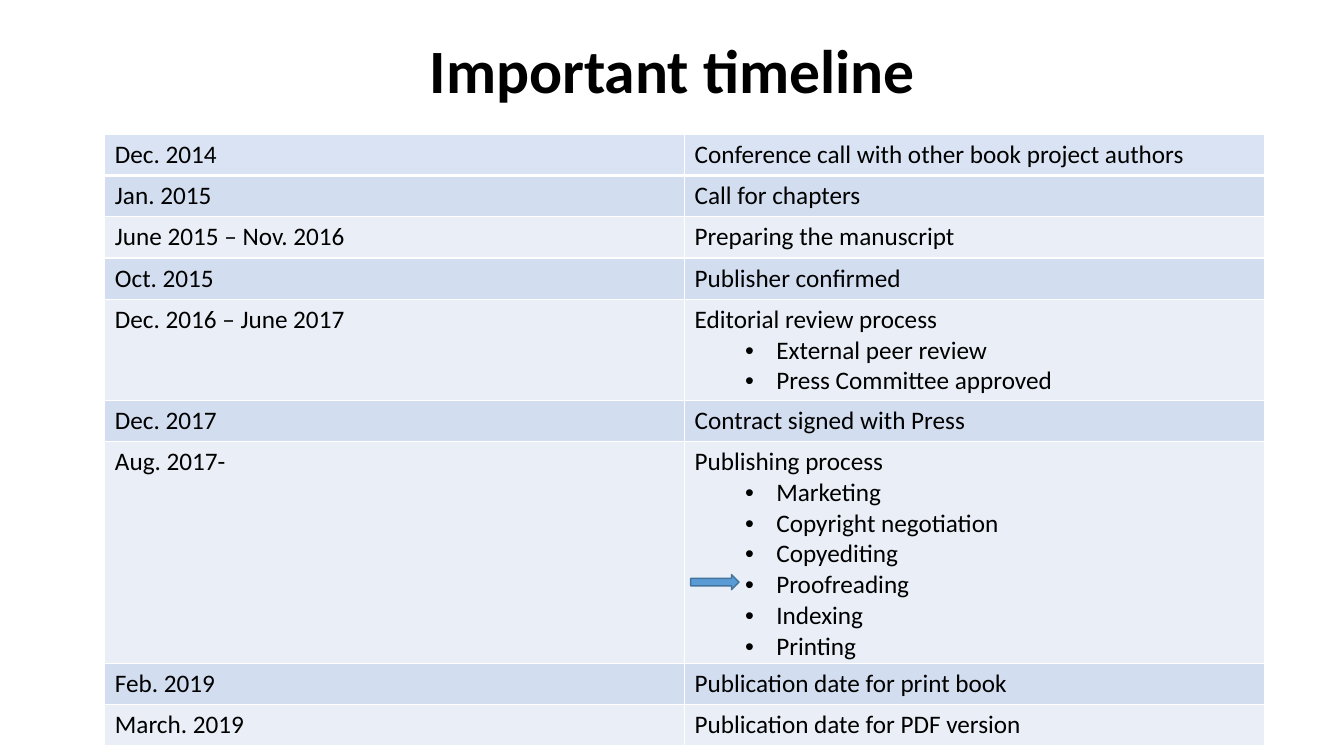
from lxml import etree
from pptx import Presentation
from pptx.dml.color import RGBColor
from pptx.enum.shapes import MSO_SHAPE
from pptx.enum.text import MSO_ANCHOR, PP_ALIGN
from pptx.oxml.ns import qn
from pptx.util import Emu, Pt

PX = 9144  # 100 px to the inch
CENTER = PP_ALIGN.CENTER
MIDDLE = MSO_ANCHOR.MIDDLE
RIGHT_ARROW = MSO_SHAPE.RIGHT_ARROW

FONT = "Calibri"
BLACK, WHITE = "000000", "FFFFFF"
HEADER_FILL = "DAE3F3"
BAND_FILLS = ["EAEFF7", "D2DEEF"]
ARROW_FILL, ARROW_LINE = "5B9BD5", "43739E"

ROW_HEIGHT = 41
BULLET_LEFT, BULLET_HANG = 81, 31

# Date, milestone, steps of the milestone
TIMELINE = [
    ("Dec. 2014", "Conference call with other book project authors", []),
    ("Jan. 2015", "Call for chapters", []),
    ("June 2015 – Nov. 2016", "Preparing the manuscript", []),
    ("Oct. 2015", "Publisher confirmed", []),
    ("Dec. 2016 – June 2017", "Editorial review process",
     ["External peer review", "Press Committee approved"]),
    ("Dec. 2017", "Contract signed with Press", []),
    ("Aug. 2017-", "Publishing process",
     ["Marketing", "Copyright negotiation", "Copyediting",
      "Proofreading", "Indexing", "Printing"]),
    ("Feb. 2019", "Publication date for print book", []),
    ("March. 2019", "Publication date for PDF version", []),
]


def px(*lengths):
    return [Emu(length * PX) for length in lengths]


def color(hex_string):
    return RGBColor.from_string(hex_string)


def set_attributes(target, values):
    for name, value in values.items():
        setattr(target, name, value)


def write(paragraph, text, size, bold=False):
    run = paragraph.add_run()
    run.text = text
    set_attributes(run.font, {"name": FONT, "size": Pt(size), "bold": bold})
    run.font.color.rgb = color(BLACK)


def add_bullet(paragraph):
    paragraph.level = 1
    properties = paragraph._p.get_or_add_pPr()
    properties.set("marL", str(BULLET_LEFT * PX))
    properties.set("indent", str(-BULLET_HANG * PX))
    etree.SubElement(properties, qn("a:buFont"), typeface="Arial")
    etree.SubElement(properties, qn("a:buChar"), char="•")


def set_borders(cell, widths):
    """Draw white borders; call before the cell is filled."""
    properties = cell._tc.get_or_add_tcPr()
    for side, width in widths.items():
        line = etree.SubElement(properties, qn(f"a:ln{side}"), w=str(Pt(width)))
        fill = etree.SubElement(line, qn("a:solidFill"))
        etree.SubElement(fill, qn("a:srgbClr"), val=WHITE)


def add_title(slide, box, text):
    frame = slide.shapes.add_textbox(*px(*box)).text_frame
    set_attributes(frame, {"word_wrap": True, "vertical_anchor": MIDDLE})
    paragraph = frame.paragraphs[0]
    set_attributes(paragraph, {"alignment": CENTER, "line_spacing": 0.9})
    write(paragraph, text, 44, bold=True)


def fill_cell(cell, row_index, text, steps):
    set_borders(cell, {"L": 1, "R": 1,
                       "T": 3 if row_index == 1 else 1,
                       "B": 3 if row_index == 0 else 1})
    cell.fill.solid()
    cell.fill.fore_color.rgb = color(
        BAND_FILLS[row_index % 2] if row_index else HEADER_FILL)
    write(cell.text_frame.paragraphs[0], text, 18)
    for step in steps:
        paragraph = cell.text_frame.add_paragraph()
        add_bullet(paragraph)
        write(paragraph, step, 18)


def add_timeline(slide, box):
    left, top, width, height = box
    table = slide.shapes.add_table(len(TIMELINE), 2, *px(*box)).table
    for column in table.columns:
        column.width = Emu(width * PX // 2)
    for index, (date, milestone, steps) in enumerate(TIMELINE):
        table.rows[index].height = Emu(ROW_HEIGHT * PX)
        fill_cell(table.cell(index, 0), index, date, [])
        fill_cell(table.cell(index, 1), index, milestone, steps)

    # Arrow at the current step, just inside the second column
    arrow = slide.shapes.add_shape(
        RIGHT_ARROW, *px(left + width // 2 + 6, top + 437, 48, 15))
    arrow.shadow.inherit = False
    arrow.fill.solid()
    arrow.fill.fore_color.rgb = color(ARROW_FILL)
    arrow.line.color.rgb = color(ARROW_LINE)
    arrow.line.width = Pt(1)


def main():
    presentation = Presentation()
    width, height = px(1333, 750)
    set_attributes(presentation, {"slide_width": width, "slide_height": height})
    slide = presentation.slides.add_slide(presentation.slide_layouts[6])
    add_title(slide, (92, 0, 1150, 145), "Important timeline")
    add_timeline(slide, (104, 133, 1150, ROW_HEIGHT * len(TIMELINE)))
    presentation.save("out.pptx")


if __name__ == "__main__":
    main()
